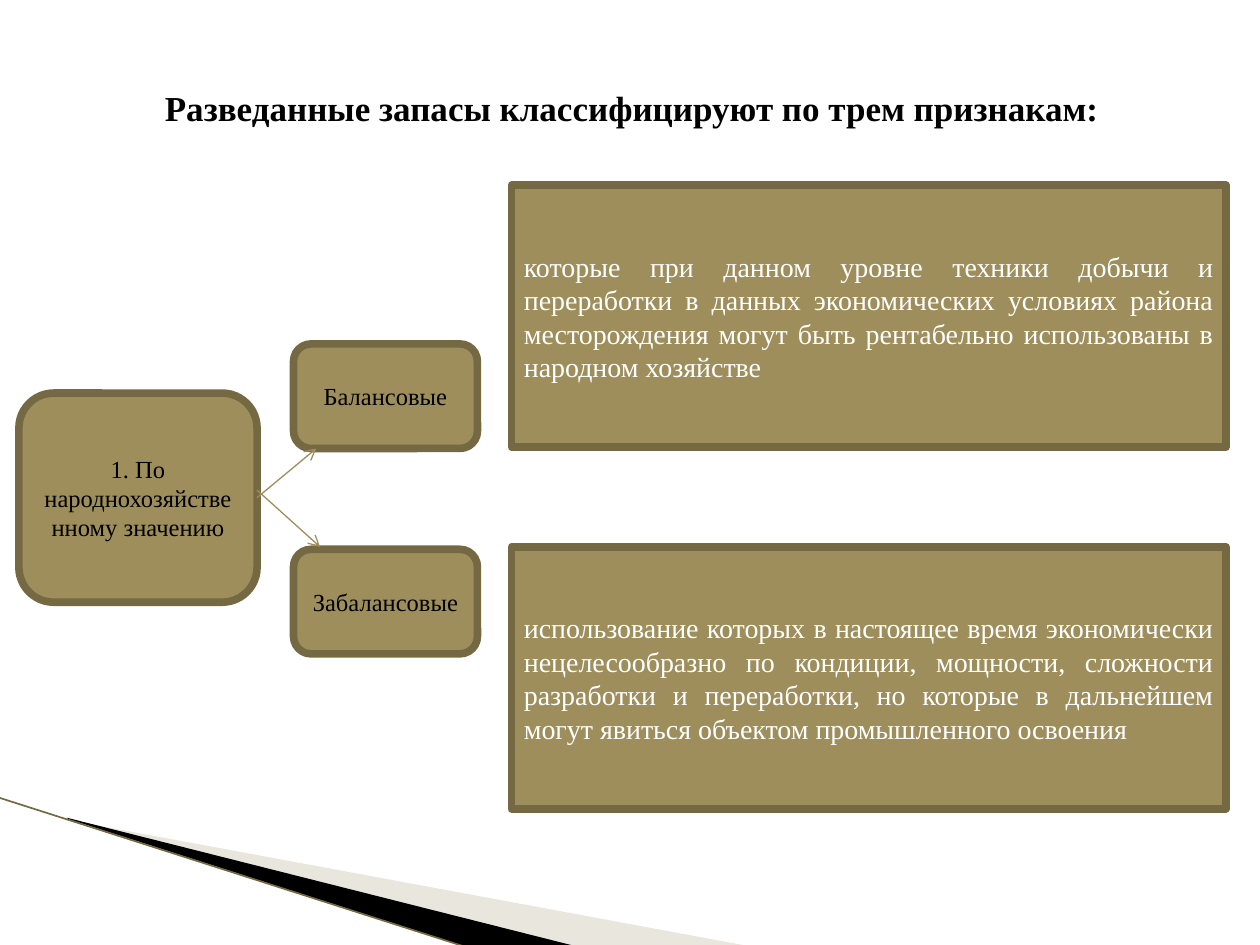
from lxml import etree
from pptx import Presentation
from pptx.dml.color import RGBColor
from pptx.enum import shapes, text
from pptx.oxml import ns
from pptx.util import Inches, Pt

FONT = "Times New Roman"
BLACK = RGBColor(0x00, 0x00, 0x00)
WHITE = RGBColor(0xFF, 0xFF, 0xFF)
KHAKI = RGBColor(0x9E, 0x8E, 0x5C)
DARK_KHAKI = RGBColor(0x75, 0x69, 0x44)
SAND = RGBColor(0xC9, 0xC1, 0xAC)

TITLE = "Разведанные запасы классифицируют по трем признакам:"
CRITERION = "1. По народнохозяйственному значению"
# name, top of its node, description, top of the description
CLASSES = [
    ("Балансовые", 2.73,
     "которые при данном уровне техники добычи и переработки в данных "
     "экономических условиях района месторождения могут быть рентабельно "
     "использованы в народном хозяйстве", 1.47),
    ("Забалансовые", 4.36,
     "использование которых в настоящее время экономически нецелесообразно "
     "по кондиции, мощности, сложности разработки и переработки, но которые "
     "в дальнейшем могут явиться объектом промышленного освоения", 4.34),
]
# outline, colour, opacity in percent
WEDGES = [
    ([(0.55, 6.51), (5.95, 7.51), (4.56, 7.51), (0.55, 6.5)], SAND, 40),
    ([(0.53, 6.49), (4.57, 7.51), (3.72, 7.52), (0.54, 6.5)], BLACK, 100),
]


def add_text(frame, words, size, color, align, bold=False):
    para = frame.paragraphs[0]
    para.alignment = align
    span = para.add_run()
    span.text = words
    span.font.name = FONT
    span.font.size = Pt(size)
    span.font.bold = bold
    span.font.color.rgb = color


def add_wedge(page, points, color, opacity):
    corners = [(Inches(x), Inches(y)) for x, y in points]
    builder = page.shapes.build_freeform(*corners[0])
    builder.add_line_segments(corners[1:], close=True)
    wedge = builder.convert_to_shape()
    wedge.shadow.inherit = False
    wedge.fill.solid()
    wedge.fill.fore_color.rgb = color
    wedge.line.fill.background()
    if opacity < 100:
        tint = wedge.fill._xPr.find(".//" + ns.qn("a:srgbClr"))
        etree.SubElement(tint, ns.qn("a:alpha"), val=str(opacity * 1000))


def add_line(page, start, end, color, width, arrow=False):
    line = page.shapes.add_connector(
        shapes.MSO_CONNECTOR.STRAIGHT, *map(Inches, start + end))
    line.line.color.rgb = color
    line.line.width = Pt(width)
    if arrow:
        etree.SubElement(line.line._get_or_add_ln(), ns.qn("a:tailEnd"), type="arrow")
    etree.SubElement(line._element.spPr, ns.qn("a:effectLst"))
    return line


def add_box(page, kind, place, words, size, color, align):
    box = page.shapes.add_shape(kind, *map(Inches, place))
    box.shadow.inherit = False
    box.fill.solid()
    box.fill.fore_color.rgb = KHAKI
    box.line.color.rgb = DARK_KHAKI
    box.line.width = Pt(4.33)
    box.text_frame.word_wrap = True
    box.text_frame.vertical_anchor = text.MSO_ANCHOR.MIDDLE
    add_text(box.text_frame, words, size, color, align)
    return box


def add_node(page, place, words):
    return add_box(page, shapes.MSO_SHAPE.ROUNDED_RECTANGLE, place, words,
                   14, BLACK, text.PP_ALIGN.CENTER)


def main():
    deck = Presentation()
    deck.slide_width, deck.slide_height = Inches(10), Inches(7.5)
    page = deck.slides.add_slide(deck.slide_layouts[5])

    for wedge in WEDGES:
        add_wedge(page, *wedge)
    add_line(page, (-0.01, 6.33), (3.71, 7.52), DARK_KHAKI, 0.95)

    title = page.shapes.title
    title.left, title.top, title.width, title.height = map(
        Inches, (1.05, 0.64, 7.93, 0.44))
    title.text_frame.word_wrap = True
    title.text_frame.auto_size = text.MSO_AUTO_SIZE.SHAPE_TO_FIT_TEXT
    title.text_frame.vertical_anchor = text.MSO_ANCHOR.TOP
    add_text(title.text_frame, TITLE, 20, BLACK, text.PP_ALIGN.CENTER, bold=True)

    criterion = add_node(page, (0.15, 3.12, 1.89, 1.66), CRITERION)
    for name, node_top, description, top in CLASSES:
        add_node(page, (2.33, node_top, 1.46, 0.83), name)
        add_box(page, shapes.MSO_SHAPE.RECTANGLE, (4.06, top, 5.67, 2.08),
                description, 16, WHITE, text.PP_ALIGN.JUSTIFY)

    add_line(page, (2.04, 3.89), (2.54, 4.34), KHAKI, 0.75, arrow=True)
    upward = add_line(page, (2.04, 3.95), (2.51, 3.56), KHAKI, 0.75, arrow=True)
    upward.begin_connect(criterion, 3)

    deck.save("out.pptx")


if __name__ == "__main__":
    main()
